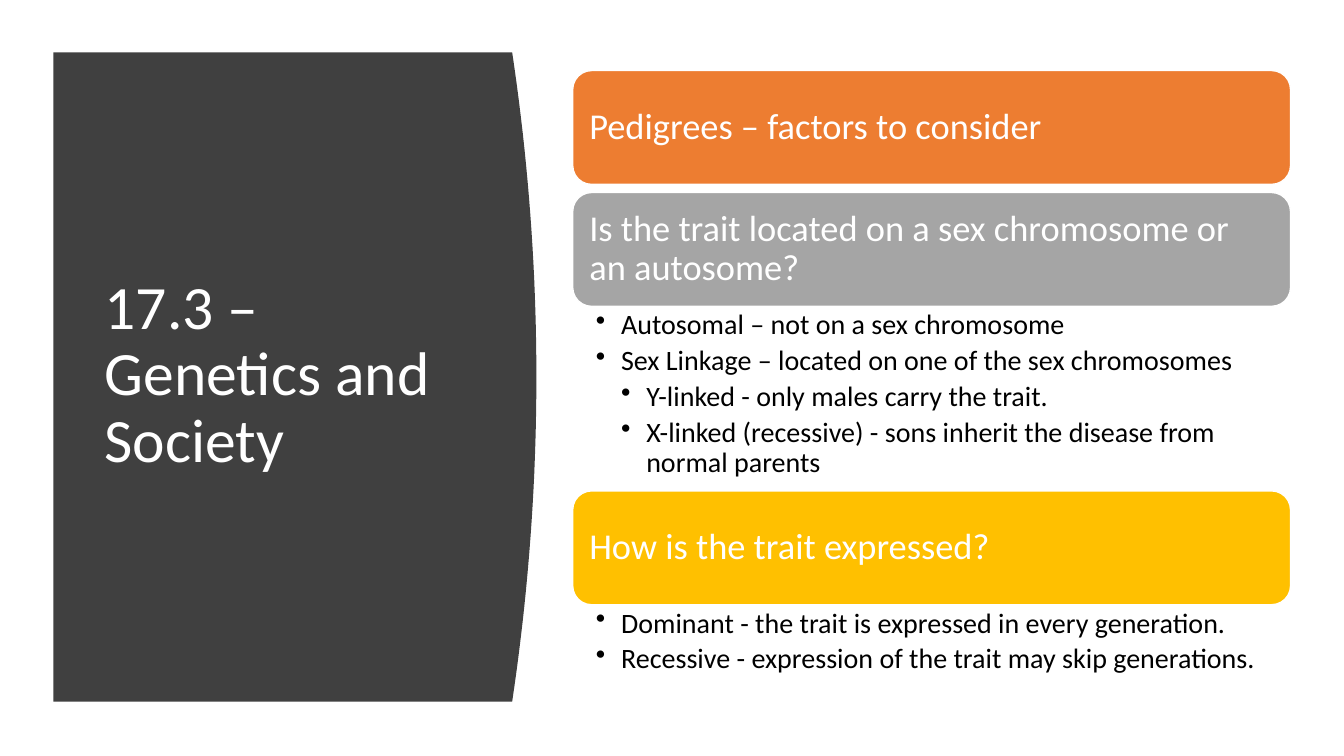
from lxml.etree import SubElement
from pptx import Presentation
from pptx.dml.color import RGBColor
from pptx.enum.shapes import MSO_SHAPE as Shape
from pptx.enum.text import MSO_ANCHOR as Anchor, PP_ALIGN as Align
from pptx.oxml.ns import qn
from pptx.util import Pt

PX = 9144
LEFT, WIDE, HIGH = 568, 712, 113
CARDS = [
    (70, "ED7D31", "Pedigrees – factors to consider", 0, []),
    (191, "A5A5A5", "Is the trait located on a sex chromosome or an autosome?", 182, [
        (1, "Autosomal – not on a sex chromosome"),
        (1, "Sex Linkage – located on one of the sex chromosomes"),
        (2, "Y-linked - only males carry the trait."),
        (2, "X-linked (recessive) - sons inherit the disease from normal parents"),
    ]),
    (487, "FFC000", "How is the trait expressed?", 77, [
        (1, "Dominant - the trait is expressed in every generation."),
        (1, "Recessive - expression of the trait may skip generations."),
    ]),
]


def color(code):
    return RGBColor.from_string(code)


def paint(shape, code):
    shape.shadow.inherit = False
    shape.fill.solid()
    shape.fill.fore_color.rgb = color(code)


def style(para, text, size, code):
    para.text = text
    para.alignment = Align.LEFT
    para.line_spacing = 0.9
    para.font.name = "Calibri"
    para.font.size = Pt(size)
    para.font.color.rgb = color(code)


def frame(shape, left, top, right, base, anchor):
    body = shape.text_frame
    body.word_wrap = True
    body.vertical_anchor = anchor
    body.margin_left, body.margin_top = left * PX, top * PX
    body.margin_right, body.margin_bottom = right * PX, base * PX
    return body


def add_box(slide, left, top, width, height):
    return slide.shapes.add_textbox(left * PX, top * PX, width * PX, height * PX)


def add_panel(slide):
    left, top, base, edge, bulge, steps = 53, 52, 696, 508, 24, 40
    curve = []
    for step in range(steps + 1):
        part = step / steps
        x = edge + bulge * (1 - (2 * part - 1) ** 2)
        curve.append((x * PX, (top + (base - top) * part) * PX))
    pen = slide.shapes.build_freeform(left * PX, top * PX)
    pen.add_line_segments(curve + [(left * PX, base * PX)], close=True)
    panel = pen.convert_to_shape()
    paint(panel, "404040")
    panel.line.fill.background()


def add_title(slide, text):
    body = frame(add_box(slide, 94, 111, 374, 524), 10, 5, 10, 5, Anchor.MIDDLE)
    style(body.paragraphs[0], text, 44, "FFFFFF")


def add_card(slide, top, fill, text):
    card = slide.shapes.add_shape(
        Shape.ROUNDED_RECTANGLE, LEFT * PX, top * PX, WIDE * PX, HIGH * PX)
    paint(card, fill)
    card.line.color.rgb = color("FFFFFF")
    card.line.width = Pt(1)
    body = frame(card, 11, 11, 11, 11, Anchor.MIDDLE)
    style(body.paragraphs[0], text, 26, "FFFFFF")


def add_list(slide, top, height, items):
    body = frame(add_box(slide, LEFT, top, WIDE, height), 23, 4, 20, 4, Anchor.TOP)
    for index, (level, text) in enumerate(items):
        para = body.add_paragraph() if index else body.paragraphs[0]
        style(para, text, 20, "000000")
        para.level = level
        para.space_after = Pt(4)
        props = para._p.get_or_add_pPr()
        props.set("marL", str(25 * level * PX))
        props.set("indent", str(-25 * PX))
        mark = SubElement(props, qn("a:buChar"))
        mark.set("char", "•")
        props.insert_element_before(mark, "a:tabLst", "a:defRPr", "a:extLst")


def main():
    deck = Presentation()
    deck.slide_width, deck.slide_height = 1333 * PX, 750 * PX
    slide = deck.slides.add_slide(deck.slide_layouts[6])
    add_panel(slide)
    add_title(slide, "17.3 – Genetics and Society")
    for top, fill, text, height, items in CARDS:
        add_card(slide, top, fill, text)
        if items:
            add_list(slide, top + HIGH, height, items)
    deck.save("out.pptx")


if __name__ == "__main__":
    main()
